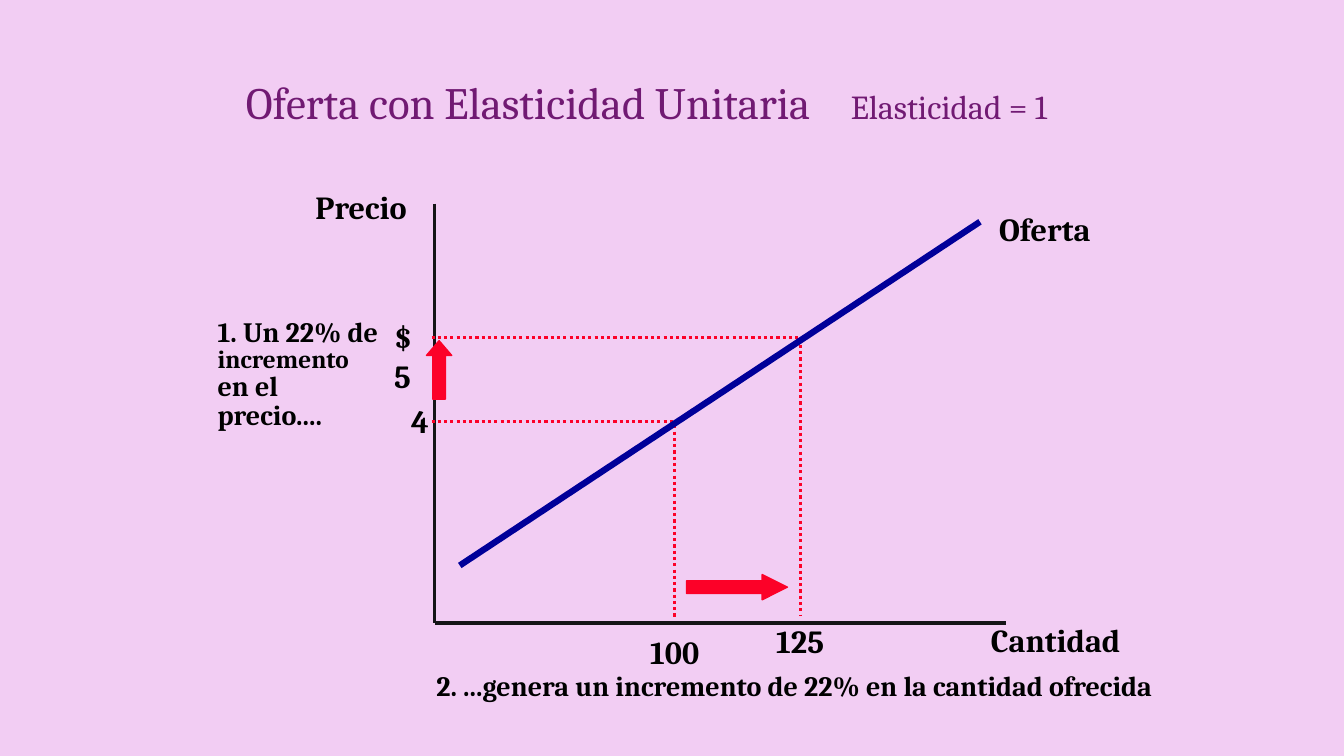
from lxml import etree
from pptx import Presentation
from pptx import util as u
from pptx.dml import color
from pptx.enum import dml, shapes, text
from pptx.oxml import ns

FONT = "Cambria"
BACK, PLUM, BLACK = "F2CDF3", "711A73", "000000"
AXIS, RED, BLUE = "151517", "FC0128", "000099"


def paint(fmt, tone):
    """Set a solid colour on a fill."""
    fmt.solid()
    fmt.fore_color.rgb = color.RGBColor.from_string(tone)


def write(slide, box, lines, tone=BLACK, bold=True, space=None, mid=False):
    """Add a text box; each line is a list of (words, size) runs."""
    frame = slide.shapes.add_textbox(*map(u.Inches, box)).text_frame
    frame.word_wrap = True
    if mid:
        frame.vertical_anchor = text.MSO_ANCHOR.MIDDLE
    for i, runs in enumerate(lines):
        para = frame.paragraphs[0] if i == 0 else frame.add_paragraph()
        if space:
            para.line_spacing = space
        for words, size in runs:
            run = para.add_run()
            run.text = words
            run.font.name, run.font.size, run.font.bold = FONT, u.Pt(size), bold
            paint(run.font.fill, tone)


def draw(slide, start, end, tone, width=2.25, dots=False):
    """Add a straight line between two points."""
    line = slide.shapes.add_connector(
        shapes.MSO_CONNECTOR.STRAIGHT, *map(u.Inches, (*start, *end)))
    paint(line.line.fill, tone)
    line.line.width = u.Pt(width)
    if dots:
        line.line.dash_style = dml.MSO_LINE.ROUND_DOT
    etree.SubElement(line._element.spPr, ns.qn("a:effectLst"))


def arrow(slide, kind, box, head):
    """Add a red block arrow."""
    block = slide.shapes.add_shape(kind, *map(u.Inches, box))
    block.shadow.inherit = False
    block.adjustments[0], block.adjustments[1] = 0.5, head
    paint(block.fill, RED)
    paint(block.line.fill, RED)
    block.line.width = u.Pt(1)


def title(slide, box):
    """Write the heading and the elasticity value."""
    runs = [("Oferta con Elasticidad Unitaria\t", 32), ("Elasticidad = 1", 24)]
    write(slide, box, [runs], PLUM, False, 0.9, True)


def graph(slide, box):
    """Draw axes, guides, supply line and labels."""
    left, top, wide, high = box
    base = top + high
    draw(slide, (left, top), (left, base), AXIS)
    draw(slide, (left, base), (left + wide, base), AXIS)
    guides = [((-0.03, 2.16), (2.43, 2.16)), ((-0.03, 1.33), (3.68, 1.33)),
              ((3.63, 1.34), (3.63, 4.09)), ((2.38, 2.2), (2.38, 4.12))]
    for (ax, ay), (bx, by) in guides:
        draw(slide, (left + ax, top + ay), (left + bx, top + by), RED, dots=True)
    draw(slide, (left + 0.25, top + 3.59), (left + 5.41, top + 0.18), BLUE, 4.5)
    labels = [("Cantidad", 5.42, 4.08, 1.56), ("Precio", -1.28, -0.21, 1.11),
              ("4", -0.33, 1.91, 0.38), ("$5", -0.5, 1.08, 0.52),
              ("125", 3.29, 4.09, 0.75), ("100", 2.04, 4.2, 0.75),
              ("Oferta", 5.5, 0.01, 1.15)]
    for words, x, y, w in labels:
        write(slide, (left + x, top + y, w, 0.49), [[(words, 23)]])


def notes(slide, box):
    """Place both steps and their arrows."""
    left, top, wide, high = box
    steps = [("1. Un 22% de", 20), ("incremento", 18), ("en el", 20), ("precio....", 20)]
    write(slide, (left, top, 1.85, 1.24), [[step] for step in steps], space=0.85)
    arrow(slide, shapes.MSO_SHAPE.UP_ARROW, (left + 2.17, top + 0.26, 0.25, 0.58), 0.583)
    last = "2. ...genera un incremento de 22% en la cantidad ofrecida"
    write(slide, (left + 2.17, top + high - 0.44, wide - 2.17, 0.44), [[(last, 20)]])
    arrow(slide, shapes.MSO_SHAPE.RIGHT_ARROW, (left + 4.75, top + 2.58, 1, 0.25), 1)


def main():
    """Build and save the slide."""
    deck = Presentation()
    deck.slide_width, deck.slide_height = u.Inches(13.33), u.Inches(7.5)
    slide = deck.slides.add_slide(deck.slide_layouts[6])
    paint(slide.background.fill, BACK)
    title(slide, (2.34, 0.42, 9.32, 1.25))
    graph(slide, (4.31, 2.02, 5.67, 4.16))
    notes(slide, (2.06, 3.12, 9.61, 3.9))
    deck.save("out.pptx")


if __name__ == "__main__":
    main()
